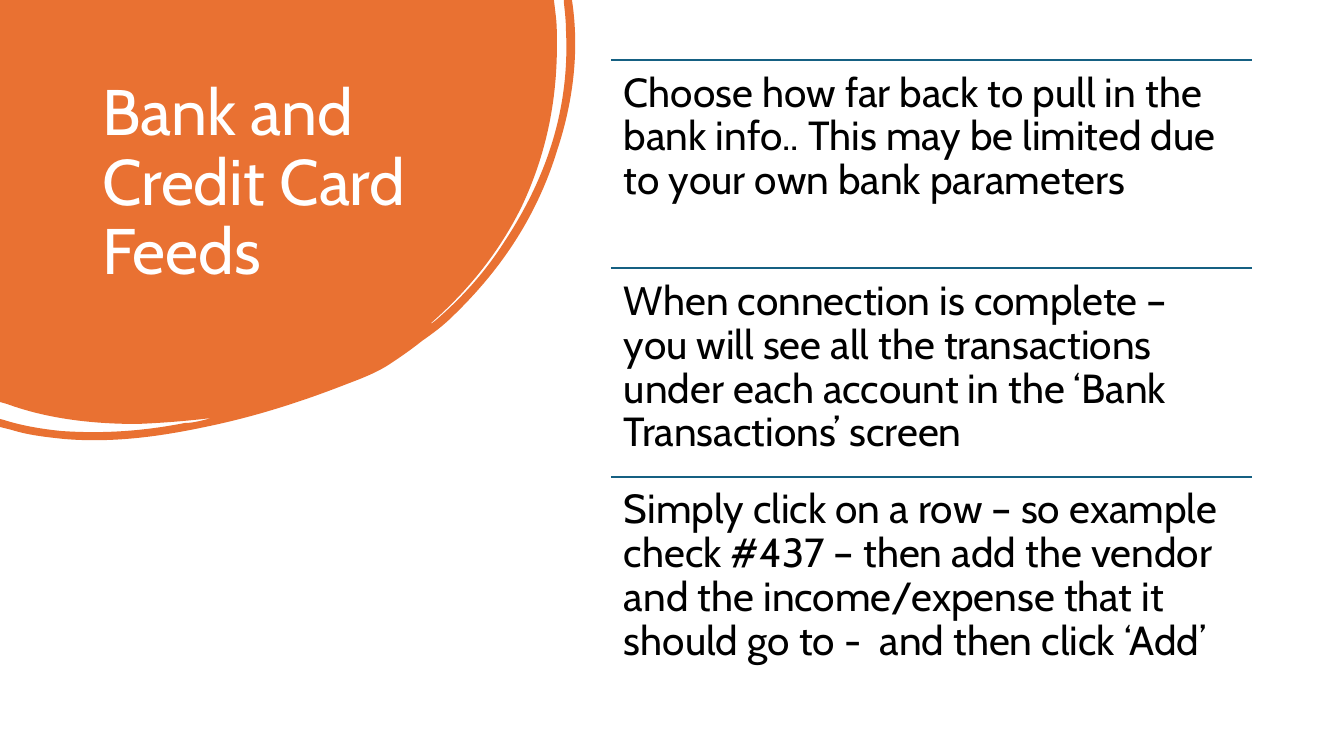
from pptx import Presentation
from pptx.dml.color import RGBColor
from pptx.enum.shapes import MSO_CONNECTOR as Connector
from pptx.enum.text import MSO_ANCHOR as Anchor, MSO_AUTO_SIZE as AutoSize, PP_ALIGN as Align
from pptx.oxml.ns import qn
from pptx.util import Pt
from lxml.etree import SubElement

# Content
HEADING = "Bank and Credit Card Feeds"
STEPS = [
    "Choose how far back to pull in the bank info.. This may be limited due "
    "to your own bank parameters",
    "When connection is complete – you will see all the transactions under "
    "each account in the ‘Bank Transactions’ screen",
    "Simply click on a row – so example check #437 – then add the vendor and "
    "the income/expense that it should go to -  and then click ‘Add’",
]

# Outline of the corner blob in px: a pair is a straight edge, a six is a Bézier edge
BLOB_SIZE = (576, 440)
BLOB_START = (0, 0)
BLOB_EDGES = [
    # inner right edge, down to the tip of the white sliver and back up
    (554, 0), (556, 17), (557, 26, 557, 36, 557, 45),
    (557, 102, 546, 155, 522, 206), (500, 251, 469, 290, 430, 324),
    (432, 324, 433, 322, 435, 321), (463, 297, 486, 271, 505, 241),
    (547, 177, 570, 108, 566, 30), (566, 21, 565, 12, 564, 3), (564, 0),
    # outer edge, round to the left side of the slide
    (572, 0), (573, 7), (579, 54, 573, 103, 557, 151),
    (537, 216, 501, 270, 452, 317), (443, 326, 432, 334, 422, 341),
    (412, 349, 402, 356, 390, 364), (378, 372, 363, 378, 347, 384),
    (301, 402, 254, 417, 205, 427), (158, 437, 111, 443, 64, 439),
    (45, 437, 28, 435, 12, 430), (0, 427),
    # lower white sliver
    (0, 419), (4, 420), (23, 426, 42, 429, 61, 431),
    (104, 434, 144, 431, 185, 423), (191, 423, 195, 422, 200, 421),
    (204, 420, 208, 419, 212, 418), (187, 421, 162, 423, 137, 424),
    (93, 424, 48, 419, 7, 404), (0, 402),
]

# Layout in px
SLIDE_W, SLIDE_H = 1344, 756
EMU_PER_PX = 914400 / 100.8
HEADING_BOX = (92, 75, 355, 224)
STEPS_LEFT, STEPS_TOP, STEPS_W, STEPS_H = 611, 60, 641, 625
INSET_LEFT, INSET_RIGHT, INSET_TOP = 13, 14, 12

FONT = "Cabin"
ORANGE = RGBColor(0xE9, 0x71, 0x32)
BLUE = RGBColor(0x15, 0x60, 0x82)
WHITE = RGBColor(0xFF, 0xFF, 0xFF)
BLACK = RGBColor(0, 0, 0)


def px(length):
    return round(length * EMU_PER_PX)


def write(frame, text, size, color):
    frame.word_wrap = True
    frame.auto_size = AutoSize.NONE
    frame.vertical_anchor = Anchor.TOP
    paragraph = frame.paragraphs[0]
    paragraph.alignment = Align.LEFT
    paragraph.line_spacing = 0.9
    run = paragraph.add_run()
    run.text = text
    run.font.name = FONT
    run.font.size = Pt(size)
    run.font.color.rgb = color


def draw_blob(shapes):
    builder = shapes.build_freeform(*BLOB_START, scale=EMU_PER_PX)
    builder.add_line_segments([edge[-2:] for edge in BLOB_EDGES], close=True)
    blob = builder.convert_to_shape()
    blob.width, blob.height = map(px, BLOB_SIZE)

    # Bend the Bézier edges
    outline = next(blob.element.iter(qn("a:path")))
    outline.set("w", str(BLOB_SIZE[0]))
    outline.set("h", str(BLOB_SIZE[1]))
    for line, edge in zip(outline.findall(qn("a:lnTo")), BLOB_EDGES):
        if len(edge) == 6:
            curve = outline.makeelement(qn("a:cubicBezTo"))
            for x, y in zip(edge[::2], edge[1::2]):
                SubElement(curve, qn("a:pt"), x=str(x), y=str(y))
            outline.replace(line, curve)

    blob.shadow.inherit = False
    blob.fill.solid()
    blob.fill.fore_color.rgb = ORANGE
    blob.line.fill.background()
    return blob


def main():
    deck = Presentation()
    deck.slide_width, deck.slide_height = px(SLIDE_W), px(SLIDE_H)
    shapes = deck.slides.add_slide(deck.slide_layouts[5]).shapes

    # Heading, with the blob behind it
    heading = shapes.title
    heading.left, heading.top, heading.width, heading.height = map(px, HEADING_BOX)
    write(heading.text_frame, HEADING, size=46, color=WHITE)
    heading.element.addprevious(draw_blob(shapes).element)

    # Steps, each under a rule
    step_h = STEPS_H / len(STEPS)
    left, width = px(STEPS_LEFT), px(STEPS_W)
    for row, step in enumerate(STEPS):
        top = px(STEPS_TOP + row * step_h)
        rule = shapes.add_connector(Connector.STRAIGHT, left, top, left + width, top)
        rule.line.color.rgb = BLUE
        rule.line.width = Pt(1.5)
        SubElement(rule.element.spPr, qn("a:effectLst"))

        frame = shapes.add_textbox(left, top, width, px(step_h)).text_frame
        frame.margin_left, frame.margin_right = px(INSET_LEFT), px(INSET_RIGHT)
        frame.margin_top = frame.margin_bottom = px(INSET_TOP)
        write(frame, step, size=29, color=BLACK)

    deck.save("out.pptx")


if __name__ == "__main__":
    main()
